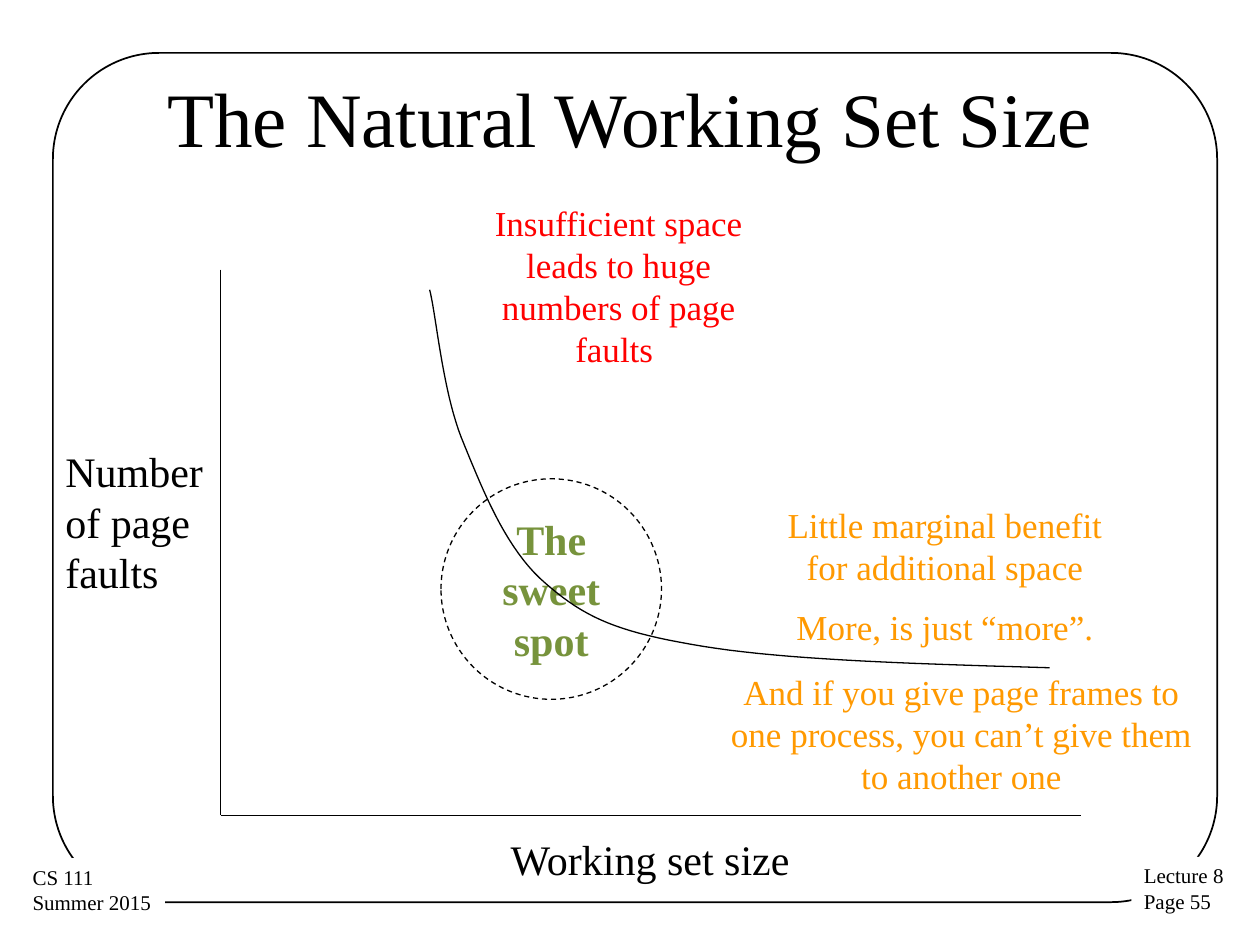
from lxml import etree
from pptx import Presentation
from pptx.dml.color import RGBColor
from pptx.enum.dml import MSO_LINE
from pptx.enum.shapes import MSO_CONNECTOR, MSO_SHAPE
from pptx.enum.text import MSO_ANCHOR, PP_ALIGN
from pptx.oxml.ns import qn
from pptx.util import Inches, Pt

LEFT, CENTER = PP_ALIGN.LEFT, PP_ALIGN.CENTER
TOP, MIDDLE = MSO_ANCHOR.TOP, MSO_ANCHOR.MIDDLE
STRAIGHT = MSO_CONNECTOR.STRAIGHT
ROUNDED, ELLIPSE = MSO_SHAPE.ROUNDED_RECTANGLE, MSO_SHAPE.OVAL
DASH = MSO_LINE.DASH
FONT = "Times New Roman"
BLACK, WHITE, RED, ORANGE, GREEN = "000000", "FFFFFF", "FF0000", "FF9900", "77933C"

# Content: position (left, top, width, height) and paragraphs
FRAME = (0.42, 0.42, 9.24, 6.74)
FOOTERS = [
    ((8.98, 6.8, 0.84, 0.51), ["Lecture 8", "Page 55"]),
    ((0.16, 6.81, 1.15, 0.51), ["CS 111", "Summer 2015"]),
]
TITLE = ((0.5, 0.3, 9, 1.25), ["The Natural Working Set Size"])
AXIS_LABELS = [
    ((0.42, 3.49, 1.51, 1.31), ["Number of page faults"], LEFT),
    ((3.66, 6.57, 3, 0.5), ["Working set size"], CENTER),
]
SWEET_SPOT = ((3.5, 3.8, 1.75, 1.75), ["The", "sweet", "spot"])
REMARKS = [
    ((3.66, 1.55, 2.5, 1.45), RED,
     ["Insufficient space leads to huge numbers of page faults "]),
    ((6.12, 3.95, 2.76, 1.28), ORANGE,
     ["Little marginal benefit for additional space", "More, is just “more”."]),
    ((5.69, 5.27, 3.88, 1.11), ORANGE,
     ["And if you give page frames to one process, you can’t give them to another one"]),
]
AXIS_TOP, ORIGIN, AXIS_RIGHT = (1.75, 2.14), (1.75, 6.47), (8.58, 6.47)
# Fault curve: a start point, then two control points and an end per segment
CURVE_START = (8.33, 5.3)
CURVE_SEGMENTS = [
    ((7.29, 5.27), (6.25, 5.24), (5.58, 5.13)),
    ((4.91, 5.02), (4.65, 4.91), (4.33, 4.63)),
    ((4.01, 4.36), (3.82, 3.86), (3.66, 3.47)),
    ((3.51, 3.08), (3.46, 2.49), (3.41, 2.3)),
]
STEPS = 20


def color(value):
    return RGBColor.from_string(value)


def set_line(shape, width=0.75):
    shape.line.color.rgb = color(BLACK)
    shape.line.width = Pt(width)


def write(shape, paragraphs, size=24, tint=BLACK, bold=False, align=CENTER,
          anchor=TOP, wrap=True, gap=0):
    frame = shape.text_frame
    frame.word_wrap = wrap
    frame.vertical_anchor = anchor
    for index, text in enumerate(paragraphs):
        para = frame.paragraphs[0] if index == 0 else frame.add_paragraph()
        para.alignment = align
        if index:
            para.space_before = Pt(gap)
        span = para.add_run()
        span.text = text
        span.font.name = FONT
        span.font.size = Pt(size)
        span.font.bold = bold
        span.font.color.rgb = color(tint)


def add_text(page, place, paragraphs, **style):
    box = page.shapes.add_textbox(*map(Inches, place))
    write(box, paragraphs, **style)
    return box


def add_outline(page, kind, place, width=0.75):
    shape = page.shapes.add_shape(kind, *map(Inches, place))
    shape.shadow.inherit = False
    shape.fill.background()
    set_line(shape, width)
    return shape


def add_axis(page, start, end):
    axis = page.shapes.add_connector(STRAIGHT, *map(Inches, start + end))
    set_line(axis)
    etree.SubElement(axis.element.spPr, qn("a:effectLst"))


def curve_points():
    """Points along the cubic segments, in slide units."""
    start = CURVE_START
    for first, second, end in CURVE_SEGMENTS:
        for step in range(1, STEPS + 1):
            t = step / STEPS
            u = 1 - t
            yield tuple(
                Inches(u**3 * a + 3 * u**2 * t * b + 3 * u * t**2 * c + t**3 * d)
                for a, b, c, d in zip(start, first, second, end)
            )
        start = end


def add_curve(page):
    builder = page.shapes.build_freeform(*map(Inches, CURVE_START))
    builder.add_line_segments(curve_points(), close=False)
    curve = builder.convert_to_shape()
    curve.shadow.inherit = False
    curve.fill.background()
    set_line(curve)


def main():
    deck = Presentation()
    deck.slide_width, deck.slide_height = Inches(10), Inches(7.5)
    page = deck.slides.add_slide(deck.slide_layouts[6])

    # Frame, with the footers covering its lower corners
    border = add_outline(page, ROUNDED, FRAME, width=1)
    border.adjustments[0] = 0.125
    for place, lines in FOOTERS:
        footer = add_text(page, place, lines, size=12, align=LEFT, wrap=False)
        footer.fill.solid()
        footer.fill.fore_color.rgb = color(WHITE)

    add_text(page, *TITLE, size=44, anchor=MIDDLE)

    # Axes and their labels
    add_axis(page, AXIS_TOP, ORIGIN)
    add_axis(page, ORIGIN, AXIS_RIGHT)
    for place, label, align in AXIS_LABELS:
        add_text(page, place, label, align=align)

    # Sweet spot, remarks and the curve
    place, words = SWEET_SPOT
    spot = add_outline(page, ELLIPSE, place)
    spot.line.dash_style = DASH
    write(spot, words, tint=GREEN, bold=True, anchor=MIDDLE, wrap=False)
    for place, tint, remark in REMARKS:
        add_text(page, place, remark, size=20, tint=tint, gap=10)
    add_curve(page)

    deck.save("out.pptx")


if __name__ == "__main__":
    main()
